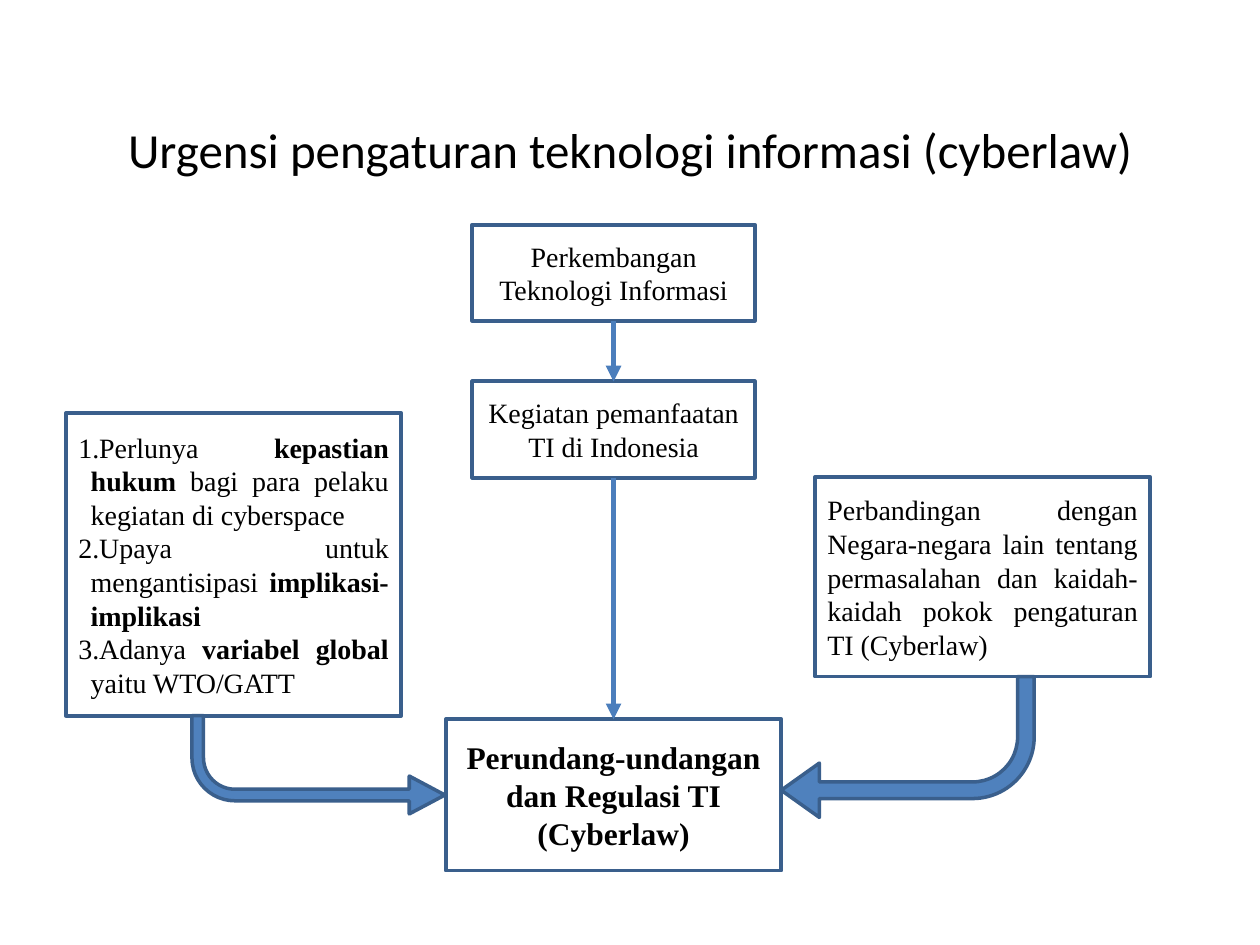
import pptx
import pptx.util
import pptx.dml.color
import pptx.enum.shapes
import pptx.enum.text
import pptx.oxml.ns
from lxml import etree
from pptx.util import Cm, Pt

BLACK = pptx.dml.color.RGBColor(0x00, 0x00, 0x00)
BORDER = pptx.dml.color.RGBColor(0x3A, 0x5F, 0x8C)
LINK = pptx.dml.color.RGBColor(0x4B, 0x7E, 0xBC)
ARROW = pptx.dml.color.RGBColor(0x4F, 0x81, 0xBD)

SHAPES = pptx.enum.shapes.MSO_SHAPE
CENTER = pptx.enum.text.PP_ALIGN.CENTER
JUSTIFY = pptx.enum.text.PP_ALIGN.JUSTIFY
CENTER_X = 12.37
WIDE = 6.76
NARROW = 5.69


def add_element(parent, tag, **attributes):
    return etree.SubElement(parent, pptx.oxml.ns.qn(tag), attributes)


class FlowSlide:
    """Draw the parts of a flow diagram on one slide in a shared style."""

    def __init__(self, slide, body_font="Times New Roman", title_font="Calibri"):
        self.slide = slide
        self.body_font = body_font
        self.title_font = title_font

    def fill_text(self, shape, paragraphs, font, size, align, bold=None, numbered=False):
        frame = shape.text_frame
        frame.word_wrap = True
        frame.vertical_anchor = pptx.enum.text.MSO_ANCHOR.MIDDLE
        for index, runs in enumerate(paragraphs):
            paragraph = frame.paragraphs[0] if index == 0 else frame.add_paragraph()
            paragraph.alignment = align
            paragraph.font.name = font
            paragraph.font.size = Pt(size)
            paragraph.font.color.rgb = BLACK
            paragraph.font.bold = bold
            for text, emphasis in runs:
                run = paragraph.add_run()
                run.text = text
                if emphasis:
                    run.font.bold = True
            if numbered:
                properties = paragraph._p.get_or_add_pPr()
                properties.set("marL", str(Cm(0.25)))
                properties.set("indent", str(-Cm(0.25)))
                number = add_element(properties, "a:buAutoNum", type="arabicPeriod")
                properties.insert(0, number)

    def title(self, text, left, top, width, height):
        shape = self.slide.shapes.add_textbox(Cm(left), Cm(top), Cm(width), Cm(height))
        self.fill_text(shape, [[(text, False)]], self.title_font, 28, CENTER)

    def box(self, paragraphs, left, top, width, height, align=CENTER, size=16,
            bold=None, numbered=False):
        shape = self.slide.shapes.add_shape(
            SHAPES.RECTANGLE, Cm(left), Cm(top), Cm(width), Cm(height))
        shape.shadow.inherit = False
        shape.fill.background()
        shape.line.color.rgb = BORDER
        shape.line.width = Pt(2.25)
        self.fill_text(shape, paragraphs, self.body_font, size, align, bold, numbered)
        return shape

    def link(self, upper, lower):
        connector = self.slide.shapes.add_connector(
            pptx.enum.shapes.MSO_CONNECTOR.STRAIGHT, 0, 0, 0, 0)
        connector.begin_connect(upper, 2)
        connector.end_connect(lower, 0)
        connector.line.color.rgb = LINK
        connector.line.width = Pt(3)
        add_element(connector.line._get_or_add_ln(), "a:tailEnd", type="triangle")
        add_element(connector._element.spPr, "a:effectLst")

    def bent_arrow(self, left, top, width, height, head, flips):
        shape = self.slide.shapes.add_shape(
            SHAPES.BENT_ARROW, Cm(left), Cm(top), Cm(width), Cm(height))
        shape.shadow.inherit = False
        shape.fill.solid()
        shape.fill.fore_color.rgb = ARROW
        shape.line.color.rgb = BORDER
        shape.line.width = Pt(2)
        for index, value in enumerate((0.118, 0.193, head, 0.438)):
            shape.adjustments[index] = value
        for flip in flips:
            shape._element.spPr.xfrm.set(flip, "1")


def main():
    presentation = pptx.Presentation()
    presentation.slide_width = Cm(25.4)
    presentation.slide_height = Cm(19.05)
    slide = presentation.slides.add_slide(presentation.slide_layouts[6])
    flow = FlowSlide(slide)

    flow.title("Urgensi pengaturan teknologi informasi (cyberlaw)", 1.9, 0.79, 21.6, 4.42)

    narrow_left = CENTER_X - NARROW / 2
    development = flow.box([[("Perkembangan Teknologi Informasi", False)]],
                           narrow_left, 4.53, NARROW, 1.94)
    usage = flow.box([[("Kegiatan pemanfaatan TI di Indonesia", False)]],
                     narrow_left, 7.69, NARROW, 1.94)
    reasons = [
        [("Perlunya ", False), ("kepastian hukum", True),
         (" bagi para pelaku kegiatan di cyberspace", False)],
        [("Upaya untuk mengantisipasi ", False), ("implikasi-implikasi", True)],
        [("Adanya ", False), ("variabel global", True), (" yaitu WTO/GATT", False)],
    ]
    flow.box(reasons, 1.33, 8.33, WIDE, 6.1, JUSTIFY, numbered=True)
    flow.box([[("Perbandingan dengan Negara-negara lain tentang permasalahan dan "
                "kaidah-kaidah pokok pengaturan TI (Cyberlaw)", False)]],
             16.43, 9.62, WIDE, 4.02, JUSTIFY)
    regulation = flow.box([[("Perundang-undangan dan Regulasi TI (Cyberlaw)", False)]],
                          CENTER_X - WIDE / 2, 14.5, WIDE, 3.05, size=18, bold=True)

    flow.link(development, usage)
    flow.link(usage, regulation)
    flow.bent_arrow(3.87, 14.43, 5.1, 1.98, 0.363, ["flipV"])
    flow.bent_arrow(15.75, 13.64, 5.1, 2.84, 0.271, ["flipH", "flipV"])

    presentation.save("out.pptx")


if __name__ == "__main__":
    main()
